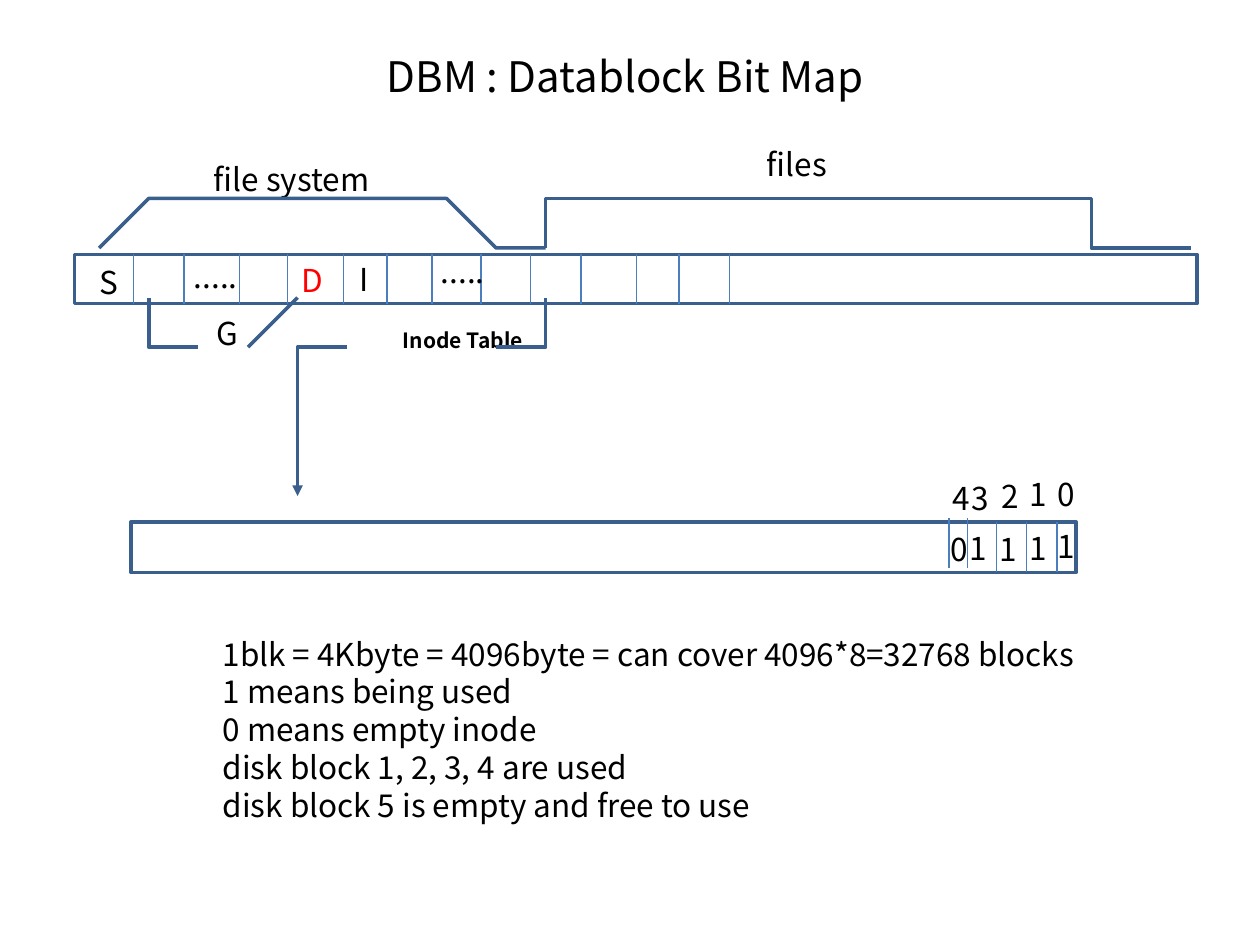
import lxml.etree
import pptx
import pptx.dml.color
import pptx.enum.shapes
import pptx.enum.text
import pptx.oxml.ns
import pptx.util
from pptx.util import Cm

BLACK = pptx.dml.color.RGBColor(0x00, 0x00, 0x00)
RED = pptx.dml.color.RGBColor(0xFF, 0x00, 0x00)
OUTLINE = pptx.dml.color.RGBColor(0x3A, 0x5F, 0x8C)
DIVIDER = pptx.dml.color.RGBColor(0x4B, 0x7E, 0xBC)

DISK_TOP, DISK_HEIGHT = 5.13, 0.99
DISK_DIVIDERS = [2.69, 3.71, 4.83, 5.79, 6.93, 7.8, 8.71, 9.7, 10.69,
                 11.71, 12.83, 13.69, 14.71]
BITMAP_TOP, BITMAP_HEIGHT = 10.52, 1.02
BITMAP_DIVIDERS = [(19.13, 10.44), (19.51, 10.44), (20.09, BITMAP_TOP),
                   (20.7, BITMAP_TOP), (21.31, BITMAP_TOP)]

# text, left, top, width
LABELS = [
    ("I", 6.99, 5.11, 0.91),
    ("file system", 4.06, 3.1, 4.01),
    ("files", 15.21, 2.79, 4.01),
    ("G", 4.11, 6.2, 0.91),
    ("S", 1.75, 5.18, 0.91),
    (".....", 8.64, 4.95, 1.73),
    (".....", 3.66, 5.05, 1.73),
]
# index, its left and top, bit, its left and top
BITS = [
    ("4", 18.95, 9.53, "0", 18.92, 10.57),
    ("3", 19.33, 9.53, "1", 19.3, 10.54),
    ("2", 19.94, 9.5, "1", 19.89, 10.57),
    ("1", 20.5, 9.45, "1", 20.5, 10.54),
    ("0", 21.06, 9.45, "1", 21.06, 10.49),
]
NOTES = [
    "1blk = 4Kbyte = 4096byte = can cover 4096*8=32768 blocks",
    "1 means being used",
    "0 means empty inode",
    "disk block 1, 2, 3, 4 are used",
    "disk block 5 is empty and free to use",
]

FILE_SYSTEM_BRACE = [
    (1.5, 4.75), (1.68, 4.72), (2.08, 4.62), (2.46, 4.57), (2.82, 4.5),
    (3.02, 4.47), (4.04, 4.4), (4.65, 4.32), (5.54, 4.34), (5.77, 4.32),
    (6.48, 4.37), (6.83, 4.42), (9.42, 4.47), (9.86, 4.52), (10.06, 4.6),
    (10.46, 4.67), (10.62, 4.7), (10.69, 4.75)]
FILES_BRACE = [
    (10.85, 4.83), (10.97, 4.65), (11.13, 4.5), (11.33, 4.45), (11.46, 4.34),
    (11.53, 4.24), (11.66, 4.19), (11.76, 4.11), (12.01, 4.04), (12.42, 3.91),
    (13.82, 3.96), (14.12, 3.99), (14.55, 4.06), (15.32, 4.04), (15.57, 3.96),
    (15.72, 3.91), (16.08, 3.99), (16.41, 4.06), (16.94, 3.99), (17.37, 3.96),
    (19.02, 3.97), (20.12, 4.06), (20.6, 4.14), (20.88, 4.19), (21.29, 4.32),
    (21.41, 4.39), (21.82, 4.47), (21.97, 4.55), (22.38, 4.65), (22.86, 4.72),
    (23.39, 4.8), (23.6, 4.83)]
GROUP_LEFT = [(2.79, 6.2), (2.97, 6.3), (3.1, 6.32), (3.35, 6.5), (3.43, 6.6),
              (3.56, 6.68), (3.84, 6.77), (4.24, 6.78)]
GROUP_RIGHT = [(5.82, 6.32), (5.61, 6.5), (5.23, 6.68), (5.08, 6.73), (5.03, 6.68)]
INODE_LEFT = [(7.82, 6.12), (8.03, 6.45), (8.05, 6.5)]
INODE_RIGHT = [(10.72, 6.2), (10.69, 6.37), (10.59, 6.53), (10.5, 6.61),
               (10.44, 6.58)]
BITMAP_ARROW = [
    (6.6, 6.53), (6.55, 6.71), (6.53, 6.88), (6.48, 7.11), (6.45, 7.21),
    (6.32, 7.44), (6.27, 7.57), (6.25, 7.7), (6.17, 7.77), (6.12, 7.9),
    (6.05, 8), (5.99, 8.1), (5.84, 8.33), (5.72, 8.59), (5.66, 8.74),
    (5.61, 8.84), (5.56, 9.07), (5.54, 9.19), (5.51, 9.3), (5.54, 9.96)]


def write_text(para, text, *, size=18, color=BLACK, bold=False,
               font="Noto Sans CJK KR"):
    span = para.add_run()
    span.text = text
    span.font.name = font
    span.font.size = pptx.util.Pt(size)
    span.font.color.rgb = color
    span.font.bold = bold


class Sketch:
    """Holds the line style and the page being drawn; lengths are in cm."""

    def __init__(self, page, outline_width=2, divider_width=0.75):
        self.page = page
        self.outline_width = pptx.util.Pt(outline_width)
        self.divider_width = pptx.util.Pt(divider_width)

    def outline(self, shape):
        """Leave the shape hollow, with the standard border."""
        shape.shadow.inherit = False
        shape.fill.background()
        shape.line.color.rgb = OUTLINE
        shape.line.width = self.outline_width

    def bar(self, left, top, width, height):
        self.outline(self.page.shapes.add_shape(
            pptx.enum.shapes.MSO_SHAPE.RECTANGLE,
            Cm(left), Cm(top), Cm(width), Cm(height)))

    def divider(self, x, top, height):
        line = self.page.shapes.add_connector(
            pptx.enum.shapes.MSO_CONNECTOR.STRAIGHT,
            Cm(x), Cm(top), Cm(x), Cm(top + height))
        line.line.color.rgb = DIVIDER
        line.line.width = self.divider_width
        lxml.etree.SubElement(line._element.spPr, pptx.oxml.ns.qn("a:effectLst"))

    def stroke(self, points, arrow=False):
        builder = self.page.shapes.build_freeform(*points[0], scale=float(Cm(1)))
        builder.add_line_segments(points[1:], close=False)
        shape = builder.convert_to_shape()
        self.outline(shape)
        if arrow:
            lxml.etree.SubElement(shape.line._get_or_add_ln(),
                                  pptx.oxml.ns.qn("a:tailEnd"), type="triangle")

    def text(self, lines, left, top, width, height=1.02, centered=False, **style):
        box = self.page.shapes.add_textbox(Cm(left), Cm(top), Cm(width), Cm(height))
        frame = box.text_frame
        frame.word_wrap = True
        if centered:
            frame.vertical_anchor = pptx.enum.text.MSO_ANCHOR.MIDDLE
        else:
            frame.auto_size = pptx.enum.text.MSO_AUTO_SIZE.SHAPE_TO_FIT_TEXT
        for number, line in enumerate(lines):
            para = frame.add_paragraph() if number else frame.paragraphs[0]
            if centered:
                para.alignment = pptx.enum.text.PP_ALIGN.CENTER
            write_text(para, line, **style)


def main():
    deck = pptx.Presentation()
    deck.slide_width, deck.slide_height = Cm(25.4), Cm(19.05)
    sketch = Sketch(deck.slides.add_slide(deck.slide_layouts[6]))

    sketch.text(["DBM : Datablock Bit Map "], 1.27, 0.76, 22.86, 1.55,
                centered=True, size=24)

    sketch.bar(1.5, DISK_TOP, 22.63, DISK_HEIGHT)
    for x in DISK_DIVIDERS:
        sketch.divider(x, DISK_TOP, DISK_HEIGHT)
    sketch.text(["D"], 5.82, 5.13, 0.91, color=RED)
    for label, left, top, width in LABELS:
        sketch.text([label], left, top, width)
    sketch.text(["Inode Table"], 7.87, 6.48, 4.01, 0.76, size=12, bold=True)

    for points in (FILE_SYSTEM_BRACE, FILES_BRACE, GROUP_LEFT, GROUP_RIGHT,
                   INODE_LEFT, INODE_RIGHT):
        sketch.stroke(points)

    sketch.bar(2.64, BITMAP_TOP, 19.05, BITMAP_HEIGHT)
    for x, top in BITMAP_DIVIDERS:
        sketch.divider(x, top, BITMAP_HEIGHT)
    for index, index_left, index_top, bit, bit_left, bit_top in BITS:
        sketch.text([index], index_left, index_top, 0.76)
        sketch.text([bit], bit_left, bit_top, 0.76)

    sketch.text(NOTES, 4.24, 12.67, 18.67, 4.11)
    sketch.stroke(BITMAP_ARROW, arrow=True)
    deck.save("out.pptx")


if __name__ == "__main__":
    main()
